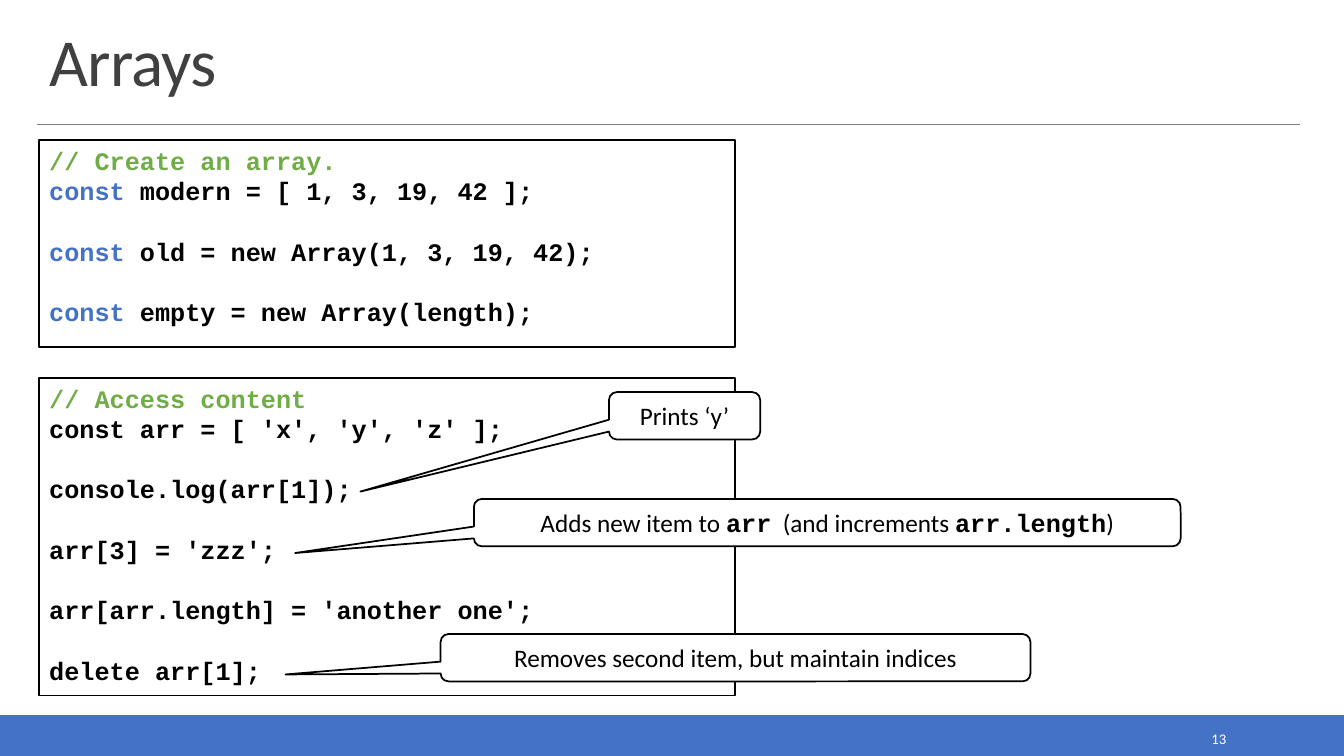
from pptx import Presentation
from pptx.dml.color import RGBColor
from pptx.enum.shapes import MSO_CONNECTOR as Connector, MSO_SHAPE as Shape
from pptx.enum.text import MSO_ANCHOR as Anchor, PP_ALIGN as Align
from pptx.oxml.ns import qn
from pptx.util import Inches, Pt

WIDTH, HEIGHT = 13.33, 7.5
LEFT, CODE_WIDTH = 0.39, 6.9
SANS, MONO = "Calibri", "Courier New"
BLACK, WHITE, BLUE, GREEN = "000000", "FFFFFF", "4472C4", "70AD47"
GREY, RULE_GREY = "404040", "808080"
CODE_LINE = 21.6

CREATE_CODE = [
    (0, [("// Create an array.", GREEN)]),
    (0, [("const", BLUE), (" modern = [ 1, 3, 19, 42 ];", BLACK)]),
    (1, [("const", BLUE), (" old = new Array(1, 3, 19, 42);", BLACK)]),
    (1, [("const", BLUE), (" empty = new Array(length);", BLACK)]),
]
ACCESS_CODE = [
    (0, [("// Access content", GREEN)]),
    (0, [("const arr = [ 'x', 'y', 'z' ];", BLACK)]),
    (1, [("console.log(arr[1]);", BLACK)]),
    (1, [("arr[3] = 'zzz';", BLACK)]),
    (1, [("arr[arr.length] = 'another one';", BLACK)]),
    (1, [("delete arr[1];", BLACK)]),
]
CALLOUTS = [
    ((6.04, 3.89, 1.5, 0.47), (-2.144, 1.6), [("Prints ‘y’", SANS)]),
    ((4.7, 4.95, 7.01, 0.47), (-0.753, 0.642),
     [("Adds new item to ", SANS), ("arr", MONO), ("  (and increments ", SANS),
      ("arr.length", MONO), (")", SANS)]),
    ((4.37, 6.29, 5.85, 0.47), (-0.763, 0.354),
     [("Removes second item, but maintain indices", SANS)]),
]


def color(value):
    """Turn a hex string into a colour."""
    return RGBColor.from_string(value)


def add_span(para, text, size, font, tint, bold=False):
    """Add one formatted run to a paragraph."""
    span = para.add_run()
    span.text = text
    span.font.size, span.font.name, span.font.bold = Pt(size), font, bold
    span.font.color.rgb = color(tint)
    return span


def add_box(page, kind, box, fill=None, line=BLACK):
    """Add an outlined shape without shadow."""
    shape = page.shapes.add_shape(kind, *map(Inches, box))
    shape.shadow.inherit = False
    if fill:
        shape.fill.solid()
        shape.fill.fore_color.rgb = color(fill)
    else:
        shape.fill.background()
    shape.line.color.rgb = color(line)
    shape.line.width = Pt(1.25)
    shape.text_frame.word_wrap = True
    return shape


def add_title(page, box, text):
    """Place the title and the rule below it."""
    title = page.shapes.title
    title.left, title.top, title.width, title.height = map(Inches, box)
    title.text_frame.vertical_anchor = Anchor.BOTTOM
    para = title.text_frame.paragraphs[0]
    para.alignment, para.line_spacing = Align.LEFT, 0.85
    span = add_span(para, text, 48, SANS, GREY)
    span.font._element.set("spc", "-50")
    left, top, width, height = box
    rule_top = Inches(top + height + 0.19)
    rule = page.shapes.add_connector(
        Connector.STRAIGHT, Inches(left - 0.02), rule_top, Inches(left + width - 0.02), rule_top)
    rule.line.color.rgb = color(RULE_GREY)
    rule.line.width = Pt(0.5)
    properties = rule._element.spPr
    properties.append(properties.makeelement(qn("a:effectLst"), {}))


def add_footer(page, box, number):
    """Draw the bottom band with the slide number."""
    add_box(page, Shape.RECTANGLE, box, BLUE, BLUE)
    left, top, width, height = box
    label = page.shapes.add_textbox(
        Inches(left + width - 2.5), Inches(top + 0.09), Inches(1.43), Inches(0.28))
    frame = label.text_frame
    frame.word_wrap, frame.vertical_anchor = True, Anchor.MIDDLE
    para = frame.paragraphs[0]
    para.alignment = Align.RIGHT
    add_span(para, number, 10.5, SANS, WHITE)


def add_code(page, box, lines):
    """Draw a code panel; each line names the empty lines above it."""
    frame = add_box(page, Shape.RECTANGLE, box).text_frame
    frame.vertical_anchor = Anchor.TOP
    for index, (gap, spans) in enumerate(lines):
        para = frame.add_paragraph() if index else frame.paragraphs[0]
        para.alignment = Align.LEFT
        para.line_spacing, para.space_before = Pt(CODE_LINE), Pt(gap * CODE_LINE)
        for text, tint in spans:
            add_span(para, text, 18, MONO, tint, True)


def add_callout(page, box, tip, spans):
    """Draw a speech bubble whose tip is given as shares of its size."""
    bubble = add_box(page, Shape.ROUNDED_RECTANGULAR_CALLOUT, box, WHITE)
    for index, value in enumerate((*tip, 0.167)):
        bubble.adjustments[index] = value
    bubble.text_frame.vertical_anchor = Anchor.MIDDLE
    para = bubble.text_frame.paragraphs[0]
    para.alignment = Align.CENTER
    for text, font in spans:
        add_span(para, text, 18, font, BLACK, font == MONO)


def main():
    """Build and save the slide."""
    deck = Presentation()
    deck.slide_width, deck.slide_height = Inches(WIDTH), Inches(HEIGHT)
    page = deck.slides.add_slide(deck.slide_layouts[5])
    add_footer(page, (0, HEIGHT - 0.4, WIDTH, 0.4), "13")
    add_title(page, (LEFT, 0.2, 12.52, 0.84), "Arrays")
    add_code(page, (LEFT, 1.39, CODE_WIDTH, 2.05), CREATE_CODE)
    add_code(page, (LEFT, 3.75, CODE_WIDTH, 3.15), ACCESS_CODE)
    for box, tip, spans in CALLOUTS:
        add_callout(page, box, tip, spans)
    deck.save("out.pptx")


if __name__ == "__main__":
    main()
